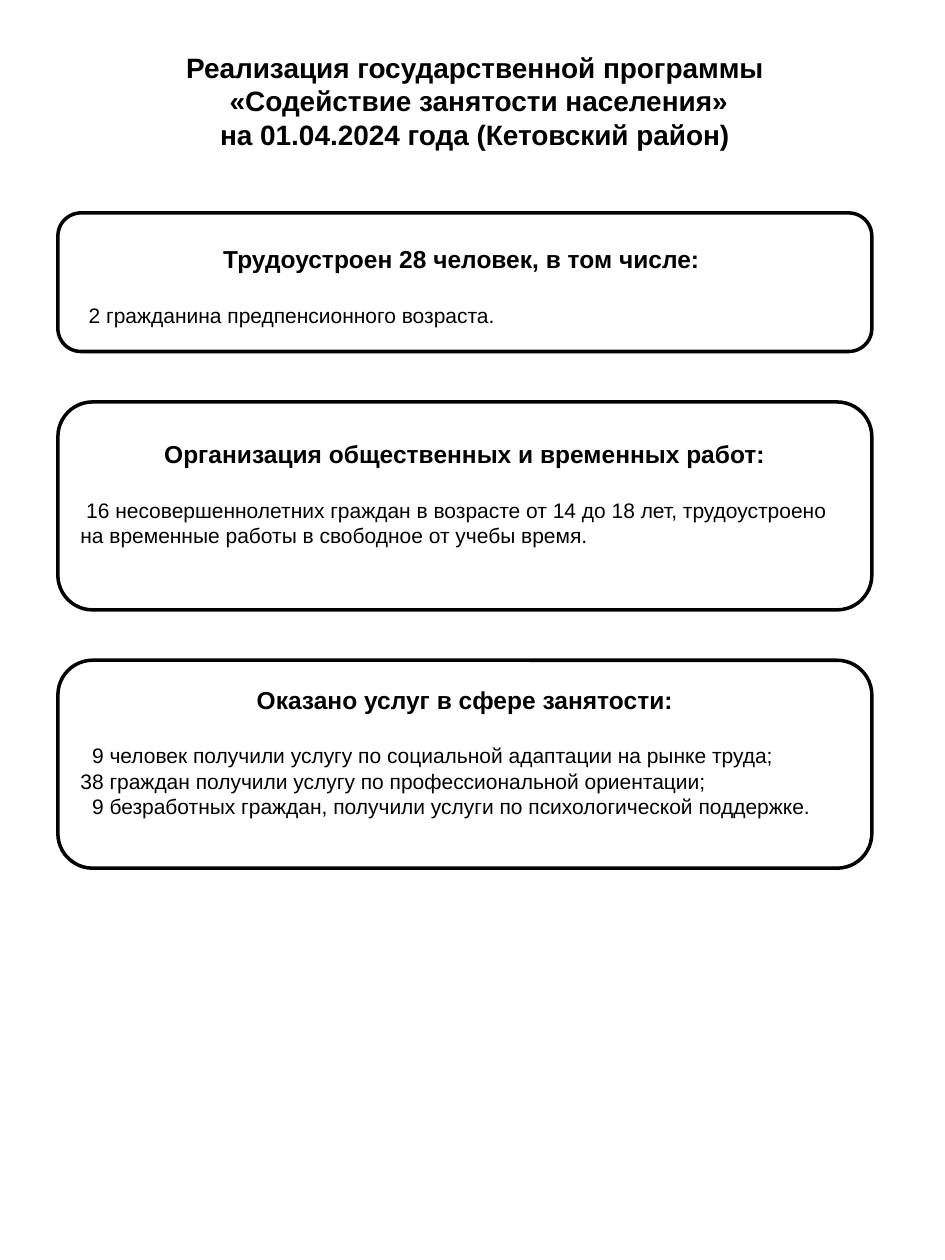
from pptx import Presentation
from pptx.dml.color import RGBColor
from pptx.enum.shapes import MSO_SHAPE
from pptx.enum.text import MSO_ANCHOR, MSO_AUTO_SIZE, PP_ALIGN
from pptx.util import Pt

ROUNDED = MSO_SHAPE.ROUNDED_RECTANGLE
TOP, MIDDLE = MSO_ANCHOR.TOP, MSO_ANCHOR.MIDDLE
GROW = MSO_AUTO_SIZE.SHAPE_TO_FIT_TEXT
LEFT, CENTER = PP_ALIGN.LEFT, PP_ALIGN.CENTER

TITLE_ONLY = 5
FONT = "Arial"
COLORS = {"ink": "000000", "paper": "FFFFFF"}
CARD_LEFT, CARD_WIDTH = 33.1, 465.1
FIRST_CARD_TOP, CARD_GAP = 121.7, 28.8
DIGIT_INDENT = 6.67  # aligns one-digit counts with two-digit ones

TITLE_LINES = [
    "Реализация государственной программы",
    " «Содействие занятости населения»",
    "на 01.04.2024 года (Кетовский район)",
]

# Height, top and bottom inset, heading, (item, first-line indent)
CARDS = [
    (79.2, 8, 3.6, "Трудоустроен 28 человек, в том числе: ", [
        ("2 гражданина предпенсионного возраста.", DIGIT_INDENT),
    ]),
    (118.8, 3.6, 18, "Организация общественных и временных работ:", [
        (" 16 несовершеннолетних граждан в возрасте от 14 до 18 лет, "
         "трудоустроено на временные работы в свободное от учебы время.", 0),
    ]),
    (118.8, 3.6, 18, "Оказано услуг в сфере занятости:", [
        ("9 человек получили услугу по социальной адаптации на рынке труда;",
         DIGIT_INDENT),
        ("38 граждан получили услугу по профессиональной ориентации;", 0),
        ("9 безработных граждан, получили услуги по психологической поддержке.",
         DIGIT_INDENT),
    ]),
]


def color(name):
    return RGBColor.from_string(COLORS[name])


def write(frame, text, size=12, bold=False, align=LEFT, after=0, indent=0):
    """Add one formatted paragraph, filling the first one if it is empty."""
    first = frame.paragraphs[0]
    paragraph = first if not first.runs else frame.add_paragraph()
    paragraph.alignment = align
    paragraph.space_before = Pt(0)
    paragraph.space_after = Pt(after)
    if indent:
        paragraph._p.get_or_add_pPr().set("indent", str(Pt(indent)))
    run = paragraph.add_run()
    run.text = text
    run.font.name = FONT
    run.font.size = Pt(size)
    run.font.bold = bold
    run.font.color.rgb = color("ink")


def add_title(slide):
    title = slide.shapes.title
    title.left, title.top = Pt(40.3), Pt(25.2)
    title.width, title.height = Pt(462.2), Pt(65.5)
    frame = title.text_frame
    frame.word_wrap = True
    frame.auto_size = GROW
    frame.vertical_anchor = TOP
    for line in TITLE_LINES:
        write(frame, line, size=16, bold=True, align=CENTER)


def add_card(slide, top, height, inset_top, inset_bottom, heading, items):
    card = slide.shapes.add_shape(
        ROUNDED, Pt(CARD_LEFT), Pt(top), Pt(CARD_WIDTH), Pt(height))
    card.shadow.inherit = False
    card.fill.solid()
    card.fill.fore_color.rgb = color("paper")
    card.line.color.rgb = color("ink")
    card.line.width = Pt(2)

    frame = card.text_frame
    frame.word_wrap = True
    frame.vertical_anchor = MIDDLE
    frame.margin_top, frame.margin_bottom = Pt(inset_top), Pt(inset_bottom)
    write(frame, heading, size=14, bold=True, align=CENTER, after=16.5)
    for item, indent in items:
        write(frame, item, indent=indent)


def main():
    presentation = Presentation()
    presentation.slide_width, presentation.slide_height = Pt(540), Pt(720)
    slide = presentation.slides.add_slide(
        presentation.slide_layouts[TITLE_ONLY])

    add_title(slide)

    # Cards stacked with equal gaps
    top = FIRST_CARD_TOP
    for height, *content in CARDS:
        add_card(slide, top, height, *content)
        top += height + CARD_GAP

    presentation.save("out.pptx")


if __name__ == "__main__":
    main()
